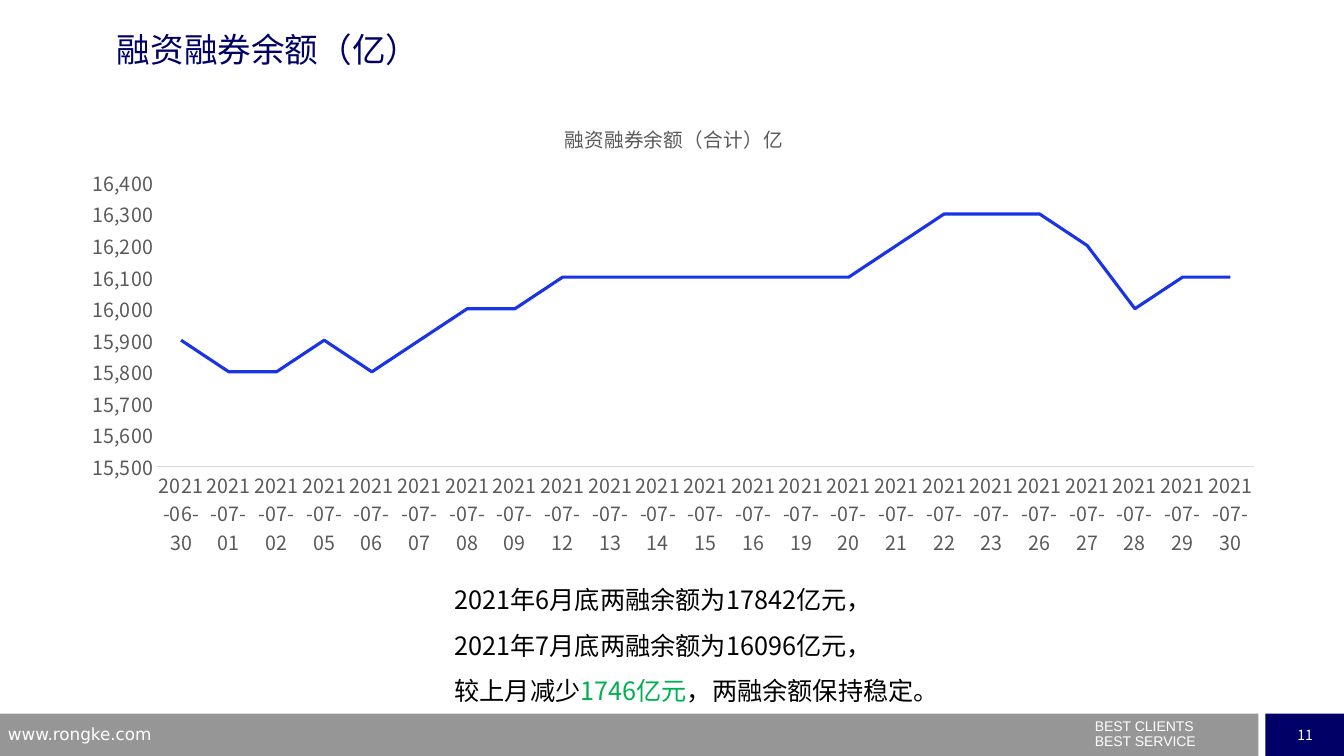
"""Builds the slide on the margin trading balance, with a line chart and a summary."""
from lxml.etree import SubElement
from pptx import Presentation
from pptx.chart.data import CategoryChartData
from pptx.dml.color import RGBColor
from pptx.enum.chart import XL_CHART_TYPE, XL_TICK_MARK
from pptx.enum.shapes import MSO_SHAPE
from pptx.enum.text import MSO_ANCHOR, PP_ALIGN
from pptx.oxml.ns import qn
from pptx.util import Inches, Pt

TITLE = "融资融券余额（亿）"
SERIES = "融资融券余额（合计）亿"
START = "2021-06-30"
JULY_DAYS = [1, 2, 5, 6, 7, 8, 9, 12, 13, 14, 15, 16, 19, 20, 21, 22, 23,
             26, 27, 28, 29, 30]
BALANCES = [15900, 15800, 15800, 15900, 15800, 15900, 16000, 16000, 16100,
            16100, 16100, 16100, 16100, 16100, 16100, 16200, 16300, 16300,
            16300, 16200, 16000, 16100, 16100]
SUMMARY = [
    [("2021年6月底两融余额为17842亿元，", "black")],
    [("2021年7月底两融余额为16096亿元，", "black")],
    [("较上月减少", "black"), ("1746亿元", "green"), ("，两融余额保持稳定。", "black")],
]
WEBSITE = [[("www.rongke.com", "white")]]
MOTTO = [[("BEST CLIENTS", "white")], [("BEST SERVICE", "white")]]
PAGE = [[("11", "white")]]

COLORS = {"navy": "000066", "gray": "969696", "white": "FFFFFF", "black": "000000",
          "green": "00B050", "line": "1B33E7", "label": "595959", "axis": "D9D9D9"}
CJK = "Noto Sans CJK SC"
WIDTH, HEIGHT = 13.33, 7.5
FOOTER_H = 0.42
FOOTER_TOP = HEIGHT - FOOTER_H
PAGE_LEFT, PAGE_W = 12.55, 0.79
FOOTER_GAP = 0.07
CHART_W, CHART_H = 12.01, 4.57
PLOT = {"x": 0.88 / CHART_W, "y": 0.78 / CHART_H,
        "w": 10.88 / CHART_W, "h": 2.82 / CHART_H}


def rgb(name):
    return RGBColor.from_string(COLORS[name])


def style(font, size, color, name=CJK):
    font.size, font.name, font.bold = Pt(size), name, False
    font.color.rgb = rgb(color)


def fill_text(tf, lines, size, name=CJK):
    for i, line in enumerate(lines):
        p = tf.paragraphs[0] if i == 0 else tf.add_paragraph()
        for text, color in line:
            r = p.add_run()
            r.text = text
            style(r.font, size, color, name)


def add_text(s, box, lines, size, name=CJK):
    tf = s.shapes.add_textbox(*map(Inches, box)).text_frame
    tf.word_wrap = True
    fill_text(tf, lines, size, name)
    return tf


def add_block(s, left, width, color):
    box = map(Inches, (left, FOOTER_TOP, width, FOOTER_H))
    sp = s.shapes.add_shape(MSO_SHAPE.RECTANGLE, *box)
    sp.shadow.inherit = False
    sp.fill.solid()
    sp.fill.fore_color.rgb = rgb(color)
    sp.line.fill.background()
    return sp


def use_east_asian_fonts(root):
    for latin in list(root.iter(qn("a:latin"))):
        ea = latin.makeelement(qn("a:ea"), {"typeface": latin.get("typeface")})
        latin.addnext(ea)


def add_footer(s):
    add_block(s, 0, PAGE_LEFT - FOOTER_GAP, "gray")
    tf = add_block(s, PAGE_LEFT, PAGE_W, "navy").text_frame
    tf.word_wrap = False
    tf.vertical_anchor = MSO_ANCHOR.MIDDLE
    fill_text(tf, PAGE, 10)
    tf.paragraphs[0].alignment = PP_ALIGN.CENTER
    tf = add_text(s, (10.76, 7.14, 2.56, 0.36), MOTTO, 10, "Arial")
    for p in tf.paragraphs:
        p.line_spacing = 0.5
    tf.paragraphs[1].space_before = Pt(5)
    add_text(s, (-0.02, 7.13, 3.22, 0.26), WEBSITE, 12, "DejaVu Sans")


def add_title(s):
    sp = s.shapes.title
    sp.left, sp.top, sp.width, sp.height = map(Inches, (1.16, 0.29, 9, 0.51))
    tf = sp.text_frame
    tf.margin_left = tf.margin_right = tf.margin_top = tf.margin_bottom = 0
    tf.vertical_anchor = MSO_ANCHOR.TOP
    fill_text(tf, [[(TITLE, "navy")]], 24)
    tf.paragraphs[0].alignment = PP_ALIGN.LEFT


def add_balance_chart(s):
    data = CategoryChartData(number_format="#,##0")
    data.categories = [START] + [f"2021-07-{day:02}" for day in JULY_DAYS]
    data.add_series(SERIES, BALANCES)
    box = map(Inches, (0.68, 1.03, CHART_W, CHART_H))
    chart = s.shapes.add_chart(XL_CHART_TYPE.LINE, *box, data).chart
    style(chart.font, 10, "black")
    chart.has_legend = False
    chart.has_title = True
    chart.chart_title.include_in_layout = False
    tf = chart.chart_title.text_frame
    fill_text(tf, [[(SERIES, "label")]], 14)

    for axis in (chart.category_axis, chart.value_axis):
        axis.major_tick_mark = axis.minor_tick_mark = XL_TICK_MARK.NONE
        axis.has_major_gridlines = False
        style(axis.tick_labels.font, 14, "label")
    chart.category_axis.format.line.color.rgb = rgb("axis")
    chart.category_axis.format.line.width = Pt(0.75)
    axis = chart.value_axis
    axis.format.line.fill.background()
    axis.minimum_scale, axis.maximum_scale, axis.major_unit = 15500, 16400, 100
    axis.tick_labels.number_format = "#,##0"
    axis.tick_labels.number_format_is_linked = False

    plot = chart.plots[0]
    plot.vary_by_categories = False
    series = plot.series[0]
    series.smooth = False
    series.format.line.color.rgb = rgb("line")
    series.format.line.width = Pt(2.25)

    area = chart._chartSpace.find(".//" + qn("c:plotArea"))
    layout = area.find(qn("c:layout"))
    if layout is None:
        layout = area.makeelement(qn("c:layout"), {})
        area.insert(0, layout)
    manual = SubElement(layout, qn("c:manualLayout"))
    settings = {"layoutTarget": "inner", "xMode": "edge", "yMode": "edge", **PLOT}
    for tag, value in settings.items():
        SubElement(manual, qn(f"c:{tag}")).set("val", str(value))
    use_east_asian_fonts(chart._chartSpace)


def add_summary(s):
    tf = add_text(s, (3.91, 5.6, 5.51, 1.41), SUMMARY, 18)
    for p in tf.paragraphs:
        p.line_spacing = 1.5
        pPr = p._p.get_or_add_pPr()
        pPr.set("marL", "0")
        pPr.set("indent", str(Inches(0.5)))


def main():
    prs = Presentation()
    prs.slide_width, prs.slide_height = Inches(WIDTH), Inches(HEIGHT)
    s = prs.slides.add_slide(prs.slide_layouts[5])
    add_footer(s)
    add_title(s)
    add_summary(s)
    add_balance_chart(s)
    use_east_asian_fonts(s.shapes._spTree)
    prs.save("out.pptx")


if __name__ == "__main__":
    main()
